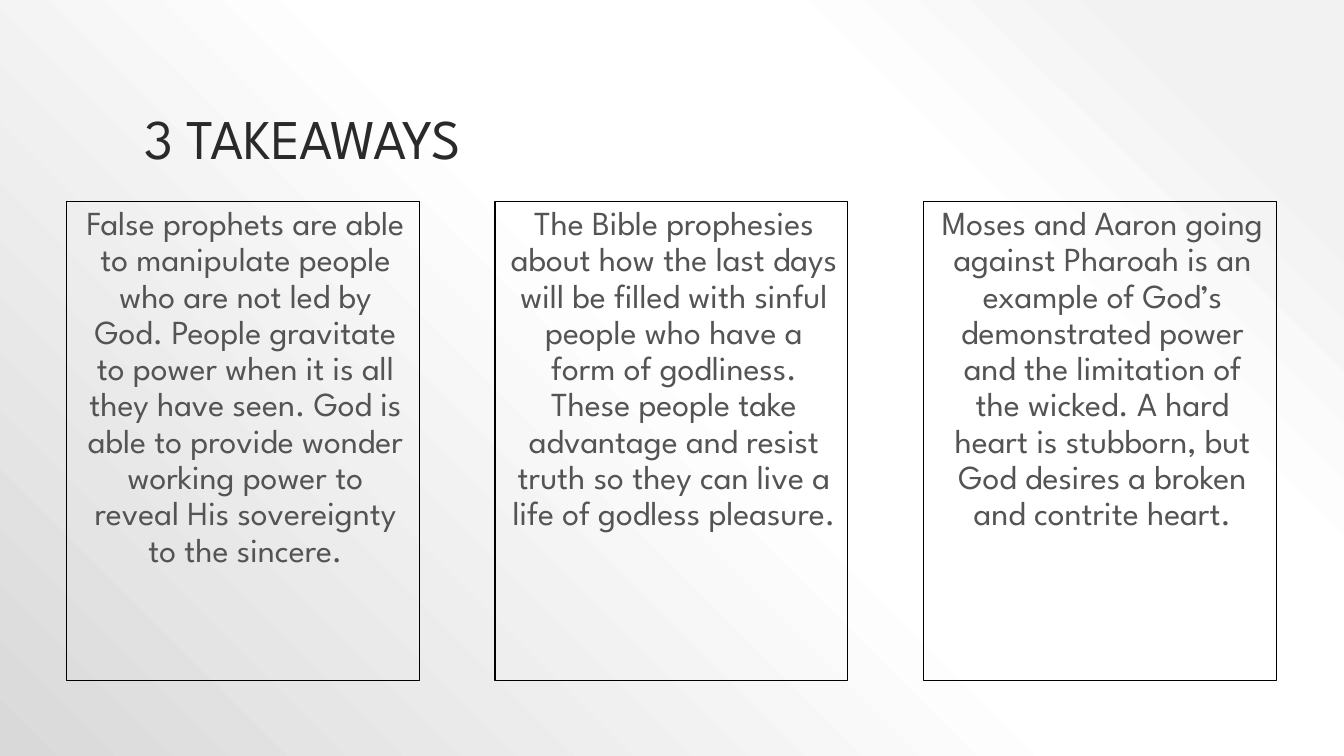
from lxml import etree
from pptx import Presentation
from pptx import util as u
from pptx.dml.color import RGBColor
from pptx.enum import shapes, text
from pptx.oxml.ns import qn

W, H = u.Inches(13.33), u.Inches(7.5)
FONT = "League Spartan"
TITLE_COLOR = RGBColor(0x2A, 0x2A, 0x2A)
BODY_COLOR = RGBColor(0x54, 0x54, 0x54)
BORDER = RGBColor(0, 0, 0)
LIGHT = RGBColor(0xF2, 0xF2, 0xF2)
WHITE = RGBColor(0xFF, 0xFF, 0xFF)
GRAY = RGBColor(0xD9, 0xD9, 0xD9)
STOPS = [(10, LIGHT), (28, WHITE), (48, WHITE), (100, GRAY)]

COL_LEFT, COL_STEP, COL_WIDTH = 0.66, 4.25, 3.5
ROW_TOP, ROW_HEIGHT = 2, 4.75

TITLE = "3 TAKEAWAYS"
TAKEAWAYS = [
    "False prophets are able to manipulate people who are not led by God. "
    "People gravitate to power when it is all they have seen. God is able to "
    "provide wonder working power to reveal His sovereignty to the sincere.",
    "The Bible prophesies about how the last days will be filled with sinful "
    "people who have a form of godliness. These people take advantage and "
    "resist truth so they can live a life of godless pleasure.",
    "Moses and Aaron going against Pharoah is an example of God’s demonstrated "
    "power and the limitation of the wicked. A hard heart is stubborn, but God "
    "desires a broken and contrite heart.",
]


def set_attrs(obj, values):
    for name, value in values.items():
        setattr(obj, name, value)


def place(sp, left, top, width, height):
    box = dict(left=left, top=top, width=width, height=height)
    set_attrs(sp, {name: u.Inches(value) for name, value in box.items()})


def write(sp, content, size, color, frame, para):
    tf = sp.text_frame
    set_attrs(tf, {"word_wrap": True, "auto_size": text.MSO_AUTO_SIZE.NONE, **frame})
    p = tf.paragraphs[0]
    set_attrs(p, {"line_spacing": 0.9, **para})
    r = p.add_run()
    r.text = content
    set_attrs(r.font, {"name": FONT, "size": u.Pt(size)})
    r.font.color.rgb = color
    return p


def paint_background(s):
    fill = s.background.fill
    fill.gradient()
    grad = s.background._cSld.find(".//" + qn("a:gradFill"))
    for child in list(grad):
        grad.remove(child)
    stops = etree.SubElement(grad, qn("a:gsLst"))
    for percent, color in STOPS:
        stop = etree.SubElement(stops, qn("a:gs"), pos=str(percent * 1000))
        etree.SubElement(stop, qn("a:srgbClr"), val=str(color))
    circle = etree.SubElement(grad, qn("a:path"), {"path": "circle"})
    etree.SubElement(circle, qn("a:fillToRect"), l="100000", b="100000")


def add_title(s):
    sp = s.shapes.title
    place(sp, 1.33, 0.3, 10.67, 1.45)
    write(sp, TITLE, 40, TITLE_COLOR,
          {"vertical_anchor": text.MSO_ANCHOR.BOTTOM},
          {"alignment": text.PP_ALIGN.LEFT})


def add_takeaway(s, column, content):
    sp = s.shapes.add_shape(shapes.MSO_SHAPE.RECTANGLE, 0, 0, 0, 0)
    place(sp, COL_LEFT + column * COL_STEP, ROW_TOP, COL_WIDTH, ROW_HEIGHT)
    sp.shadow.inherit = False
    sp.fill.background()
    sp.line.color.rgb = BORDER
    sp.line.width = u.Pt(0.75)
    p = write(sp, content, 24, BODY_COLOR,
              {"vertical_anchor": text.MSO_ANCHOR.TOP},
              {"alignment": text.PP_ALIGN.CENTER, "space_before": u.Pt(18)})
    pPr = p._p.get_or_add_pPr()
    pPr.set("marL", str(u.Inches(0.05)))
    pPr.set("indent", "0")


def main():
    prs = Presentation()
    set_attrs(prs, {"slide_width": W, "slide_height": H})
    s = prs.slides.add_slide(prs.slide_layouts[5])
    paint_background(s)
    add_title(s)
    for column, content in enumerate(TAKEAWAYS):
        add_takeaway(s, column, content)
    prs.save("out.pptx")


if __name__ == "__main__":
    main()
